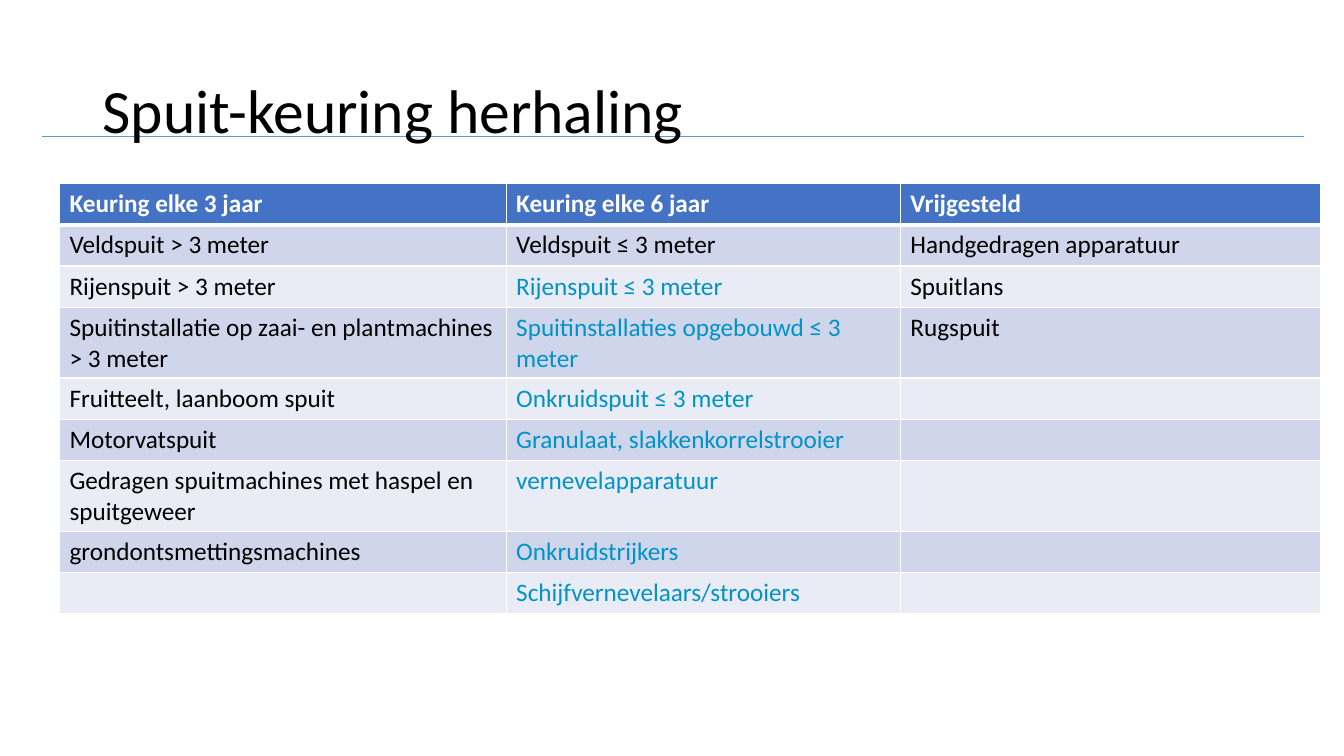
import dataclasses

import pptx
import pptx.dml.color
import pptx.enum.shapes
import pptx.enum.text
import pptx.oxml.ns
import pptx.util
from lxml import etree
from pptx.util import Inches

COLOURS = {
    "black": "000000",
    "white": "FFFFFF",
    "rule": "5B9BD5",
    "header": "4472C4",
    "odd": "CFD5EA",
    "even": "E9EBF5",
    "highlight": "0093C9",
}
FONT = "Calibri"
ROW_HEIGHT = 0.41


@dataclasses.dataclass(frozen=True)
class Category:
    heading: str
    width: float
    machines: tuple[str, ...]
    plain_count: int  # leading machines in black, the rest highlighted


CATEGORIES = (
    Category("Keuring elke 3 jaar", 4.43, (
        "Veldspuit > 3 meter",
        "Rijenspuit > 3 meter",
        "Spuitinstallatie op zaai- en plantmachines > 3 meter",
        "Fruitteelt, laanboom spuit",
        "Motorvatspuit",
        "Gedragen spuitmachines met haspel en spuitgeweer",
        "grondontsmettingsmachines",
    ), 7),
    Category("Keuring elke 6 jaar", 3.91, (
        "Veldspuit ≤ 3 meter",
        "Rijenspuit ≤ 3 meter",
        "Spuitinstallaties opgebouwd ≤ 3 meter",
        "Onkruidspuit ≤ 3 meter",
        "Granulaat, slakkenkorrelstrooier",
        "vernevelapparatuur",
        "Onkruidstrijkers",
        "Schijfvernevelaars/strooiers",
    ), 1),
    Category("Vrijgesteld", 4.17, (
        "Handgedragen apparatuur",
        "Spuitlans",
        "Rugspuit",
    ), 3),
)


def rgb(colour: str) -> pptx.dml.color.RGBColor:
    return pptx.dml.color.RGBColor.from_string(COLOURS[colour])


def write(frame, text: str, size: float, colour: str, bold: bool = False) -> None:
    """Put one formatted run in the first paragraph of a text frame."""
    run = frame.paragraphs[0].add_run()
    run.text = text
    formats = {"name": FONT, "size": pptx.util.Pt(size), "bold": bold}
    for attribute, value in formats.items():
        setattr(run.font, attribute, value)
    run.font.color.rgb = rgb(colour)


def add_borders(cell, bottom_width: float) -> None:
    properties = cell._tc.get_or_add_tcPr()
    widths = {"a:lnL": 1, "a:lnR": 1, "a:lnT": 1, "a:lnB": bottom_width}
    for tag, width in widths.items():
        border = etree.SubElement(properties, pptx.oxml.ns.qn(tag), w=str(pptx.util.Pt(width)))
        fill = etree.SubElement(border, pptx.oxml.ns.qn("a:solidFill"))
        etree.SubElement(fill, pptx.oxml.ns.qn("a:srgbClr"), val=COLOURS["white"])


def fill_cell(cell, fill: str, bottom_width: float = 1) -> None:
    add_borders(cell, bottom_width)
    cell.fill.solid()
    cell.fill.fore_color.rgb = rgb(fill)


def add_rule(slide) -> None:
    rule = slide.shapes.add_connector(
        pptx.enum.shapes.MSO_CONNECTOR.STRAIGHT,
        Inches(0.42), Inches(1.35), Inches(12.93), Inches(1.35))
    rule.line.color.rgb = rgb("rule")
    rule.line.width = pptx.util.Pt(0.5)
    etree.SubElement(rule._element.spPr, pptx.oxml.ns.qn("a:effectLst"))


def add_title(slide) -> None:
    title = slide.shapes.add_textbox(Inches(0.92), Inches(0.4), Inches(11.5), Inches(1.45))
    frame = title.text_frame
    formats = {"word_wrap": True, "vertical_anchor": pptx.enum.text.MSO_ANCHOR.MIDDLE}
    for attribute, value in formats.items():
        setattr(frame, attribute, value)
    write(frame, "Spuit-keuring herhaling", 44, "black")
    frame.paragraphs[0].line_spacing = 0.9


def add_inspection_table(slide) -> None:
    row_count = 1 + max(len(category.machines) for category in CATEGORIES)
    total_width = sum(category.width for category in CATEGORIES)
    table = slide.shapes.add_table(
        row_count, len(CATEGORIES), Inches(0.59), Inches(1.82),
        Inches(total_width), Inches(row_count * ROW_HEIGHT)).table
    for row in table.rows:
        row.height = Inches(ROW_HEIGHT)
    for column, category in enumerate(CATEGORIES):
        table.columns[column].width = Inches(category.width)
        heading = table.cell(0, column)
        fill_cell(heading, "header", bottom_width=3)
        write(heading.text_frame, category.heading, 18, "white", bold=True)
        for row in range(1, row_count):
            fill_cell(table.cell(row, column), "odd" if row % 2 else "even")
        for row, machine in enumerate(category.machines, start=1):
            colour = "black" if row <= category.plain_count else "highlight"
            write(table.cell(row, column).text_frame, machine, 18, colour)


def main() -> None:
    presentation = pptx.Presentation()
    presentation.slide_width = Inches(13.33)
    presentation.slide_height = Inches(7.5)
    slide = presentation.slides.add_slide(presentation.slide_layouts[6])
    add_rule(slide)
    add_title(slide)
    add_inspection_table(slide)
    presentation.save("out.pptx")


if __name__ == "__main__":
    main()
